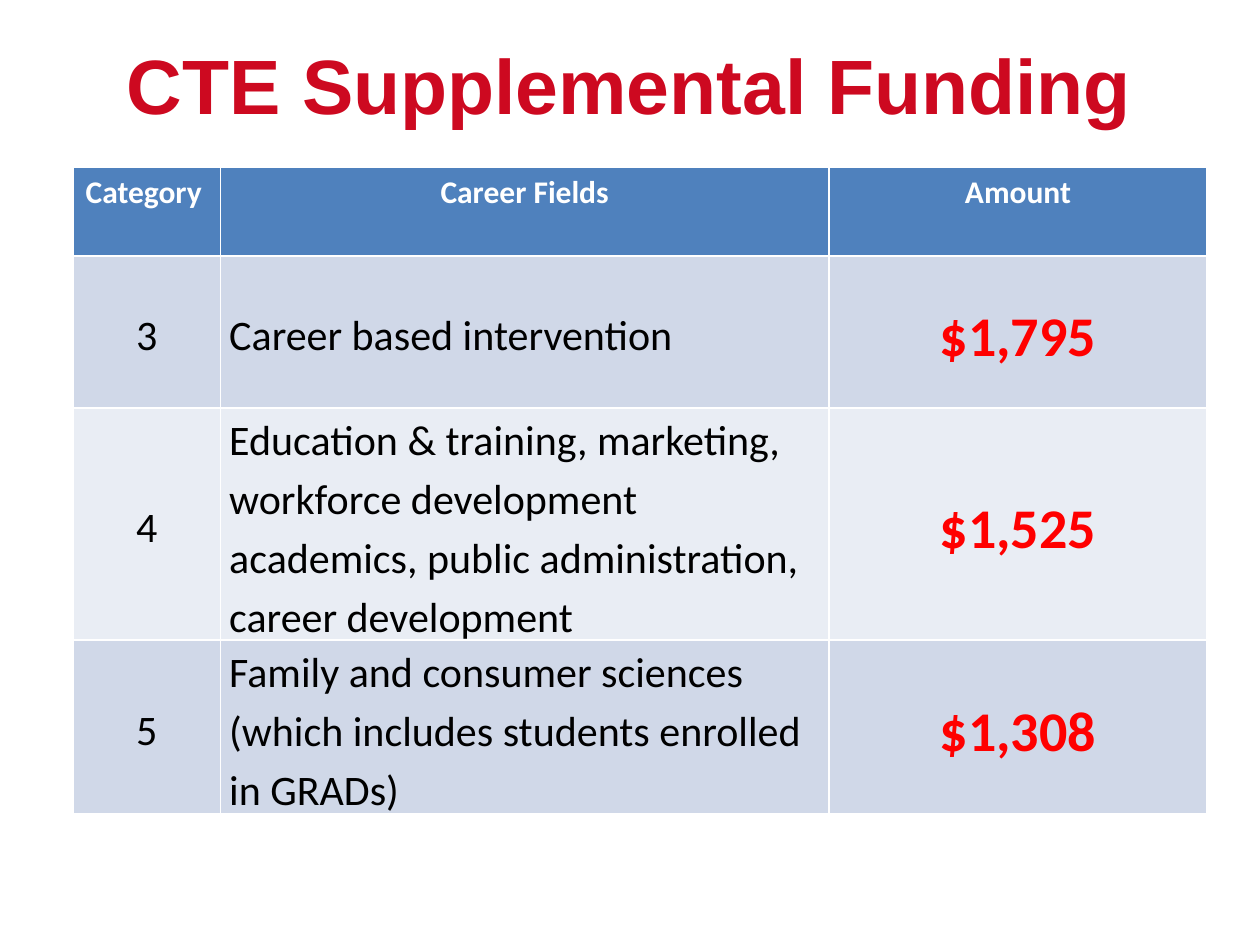
from pptx import Presentation
from pptx.dml.color import RGBColor
from pptx.enum.text import MSO_ANCHOR, PP_ALIGN
from pptx.util import Inches, Pt

# Content
TITLE = "CTE Supplemental Funding"
HEADINGS = ("Category", "Career Fields", "Amount")
FUNDING = [
    ("3", "Career based intervention", "$1,795"),
    ("4", "Education & training, marketing, workforce development academics, "
          "public administration, career development", "$1,525"),
    ("5", "Family and consumer sciences (which includes students enrolled in GRADs)",
     "$1,308"),
]

# Look
COLORS = {"title": "CD0920", "header": "4F81BD", "odd": "D0D8E8", "even": "E9EDF4",
          "white": "FFFFFF", "black": "000000", "amount": "FF0000"}
LEFT, CENTER = PP_ALIGN.LEFT, PP_ALIGN.CENTER
HEADING_ALIGNS = (LEFT, CENTER, CENTER)
# Body columns: alignment, size, color, bold
BODY_STYLES = ((CENTER, 24, "black", False),
               (LEFT, 24, "black", False),
               (CENTER, 32, "amount", True))

# Grid, in inches
COLUMN_WIDTHS = (1.17, 4.83, 3)
ROW_HEIGHTS = (0.7, 1.21, 1.82, 1.21)


def rgb(name):
    return RGBColor.from_string(COLORS[name])


def write(frame, text, align, size, color, bold, face="Calibri"):
    paragraph = frame.paragraphs[0]
    paragraph.text = text
    paragraph.alignment = align
    font = paragraph.font
    font.name, font.size, font.bold = face, Pt(size), bold
    font.color.rgb = rgb(color)
    return paragraph


def fill_cell(cell, color):
    cell.fill.solid()
    cell.fill.fore_color.rgb = rgb(color)


prs = Presentation()
prs.slide_width, prs.slide_height = Inches(10), Inches(7.5)
slide = prs.slides.add_slide(prs.slide_layouts[6])

# Title
title = slide.shapes.add_textbox(Inches(0.5), Inches(0.3), Inches(9), Inches(0.74)).text_frame
title.word_wrap = True
title.margin_left = title.margin_right = title.margin_top = title.margin_bottom = 0
write(title, TITLE, CENTER, 44, "title", True, "Arial")

# Funding table
table = slide.shapes.add_table(
    len(ROW_HEIGHTS), len(COLUMN_WIDTHS), Inches(0.58), Inches(1.33),
    Inches(sum(COLUMN_WIDTHS)), Inches(sum(ROW_HEIGHTS))).table
for column, width in zip(table.columns, COLUMN_WIDTHS):
    column.width = Inches(width)
for row, height in zip(table.rows, ROW_HEIGHTS):
    row.height = Inches(height)

# Header row
for col, (heading, align) in enumerate(zip(HEADINGS, HEADING_ALIGNS)):
    cell = table.cell(0, col)
    fill_cell(cell, "header")
    write(cell.text_frame, heading, align, 18, "white", True)

# Body rows
for row, entry in enumerate(FUNDING, start=1):
    for col, (text, style) in enumerate(zip(entry, BODY_STYLES)):
        cell = table.cell(row, col)
        fill_cell(cell, "odd" if row % 2 else "even")
        cell.vertical_anchor = MSO_ANCHOR.MIDDLE
        cell.margin_left = cell.margin_right = Inches(0.07)
        cell.margin_top = cell.margin_bottom = 0
        write(cell.text_frame, text, *style).line_spacing = 1.15

prs.save("out.pptx")
